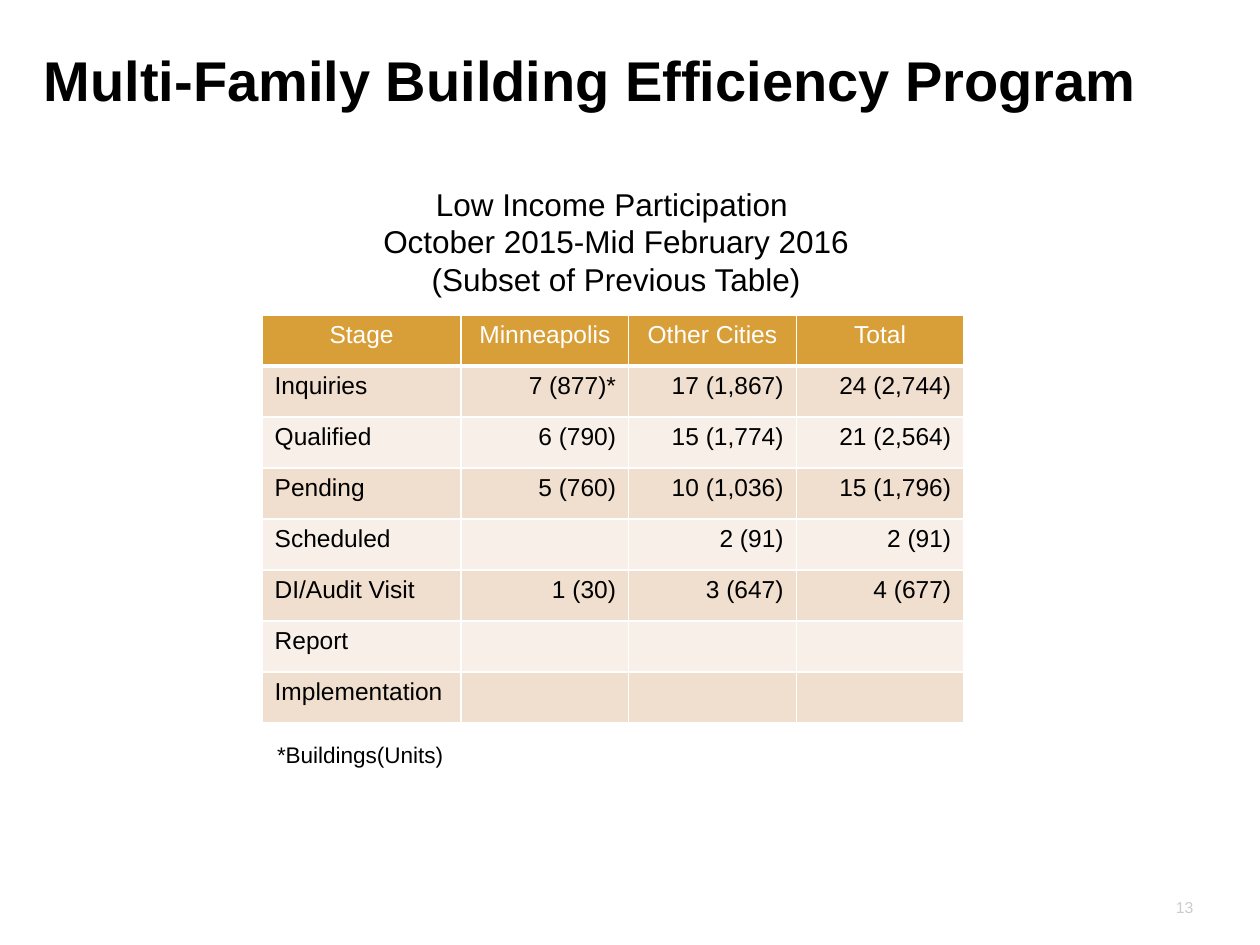
from lxml import etree
from pptx import Presentation
from pptx import util as u
from pptx.dml.color import RGBColor
from pptx.enum import text as t
from pptx.oxml.ns import qn

COLORS = {
    "black": "000000",
    "white": "FFFFFF",
    "gold": "D89F39",
    "band": "F0DFCE",
    "pale": "F8F0E8",
    "gray": "CCCCCC",
}
LEFT, CENTER, RIGHT = t.PP_ALIGN.LEFT, t.PP_ALIGN.CENTER, t.PP_ALIGN.RIGHT

STAGES = [
    ("Stage", "Minneapolis", "Other Cities", "Total"),
    ("Inquiries", "7 (877)*", "17 (1,867)", "24 (2,744)"),
    ("Qualified", "6 (790)", "15 (1,774)", "21 (2,564)"),
    ("Pending", "5 (760)", "10 (1,036)", "15 (1,796)"),
    ("Scheduled", "", "2 (91)", "2 (91)"),
    ("DI/Audit Visit", "1 (30)", "3 (647)", "4 (677)"),
    ("Report", "", "", ""),
    ("Implementation", "", "", ""),
]
COLUMN_WIDTHS = (1.58, 1.33, 1.33, 1.33)


def rgb(name):
    return RGBColor.from_string(COLORS[name])


def write(frame, content, size=14, color="black", align=LEFT, bold=False):
    for number, line in enumerate(content.split("\n")):
        paragraph = frame.add_paragraph() if number else frame.paragraphs[0]
        paragraph.alignment = align
        paragraph.font.size = u.Pt(size)
        if line:
            run = paragraph.add_run()
            run.text = line
            run.font.name = "Arial"
            run.font.size = u.Pt(size)
            run.font.bold = bold
            run.font.color.rgb = rgb(color)


def add_label(slide, box, content, **style):
    label = slide.shapes.add_textbox(*map(u.Inches, box))
    label.text_frame.word_wrap = True
    label.text_frame.vertical_anchor = t.MSO_ANCHOR.MIDDLE
    write(label.text_frame, content, **style)


def add_borders(cell, bottom):
    properties = cell._tc.get_or_add_tcPr()
    for side, width in (("L", 1), ("R", 1), ("T", 1), ("B", bottom)):
        border = etree.SubElement(properties, qn(f"a:ln{side}"), w=str(u.Pt(width)))
        fill = etree.SubElement(border, qn("a:solidFill"))
        etree.SubElement(fill, qn("a:srgbClr"), val=COLORS["white"])


def add_stage_table(slide):
    box = map(u.Inches, (2.08, 2.5, sum(COLUMN_WIDTHS), 3.24))
    table = slide.shapes.add_table(len(STAGES), len(COLUMN_WIDTHS), *box).table
    for column, width in zip(table.columns, COLUMN_WIDTHS):
        column.width = u.Inches(width)
    for r, entries in enumerate(STAGES):
        header = r == 0
        fill = "gold" if header else "band" if r % 2 else "pale"
        for c, entry in enumerate(entries):
            cell = table.cell(r, c)
            add_borders(cell, bottom=3 if header else 1)
            cell.fill.solid()
            cell.fill.fore_color.rgb = rgb(fill)
            write(
                cell.text_frame,
                entry,
                color="white" if header else "black",
                align=CENTER if header else RIGHT if c else LEFT,
            )


def main():
    deck = Presentation()
    deck.slide_width, deck.slide_height = u.Inches(10), u.Inches(7.5)
    slide = deck.slides.add_slide(deck.slide_layouts[6])
    add_label(slide, (0.25, 0.17, 9.25, 0.92),
              "Multi-Family Building Efficiency Program", size=32, bold=True)
    add_stage_table(slide)
    add_label(slide, (2.1, 1.33, 5.58, 1.17),
              "Low Income Participation \nOctober 2015-Mid February 2016\n"
              "(Subset of Previous Table)", size=18, align=CENTER)
    add_label(slide, (2.1, 5.82, 1.58, 0.33), "*Buildings(Units)", size=12.9)
    add_label(slide, (7.24, 7.06, 2.33, 0.28), "13",
              size=9, color="gray", align=RIGHT)
    deck.save("out.pptx")


if __name__ == "__main__":
    main()
